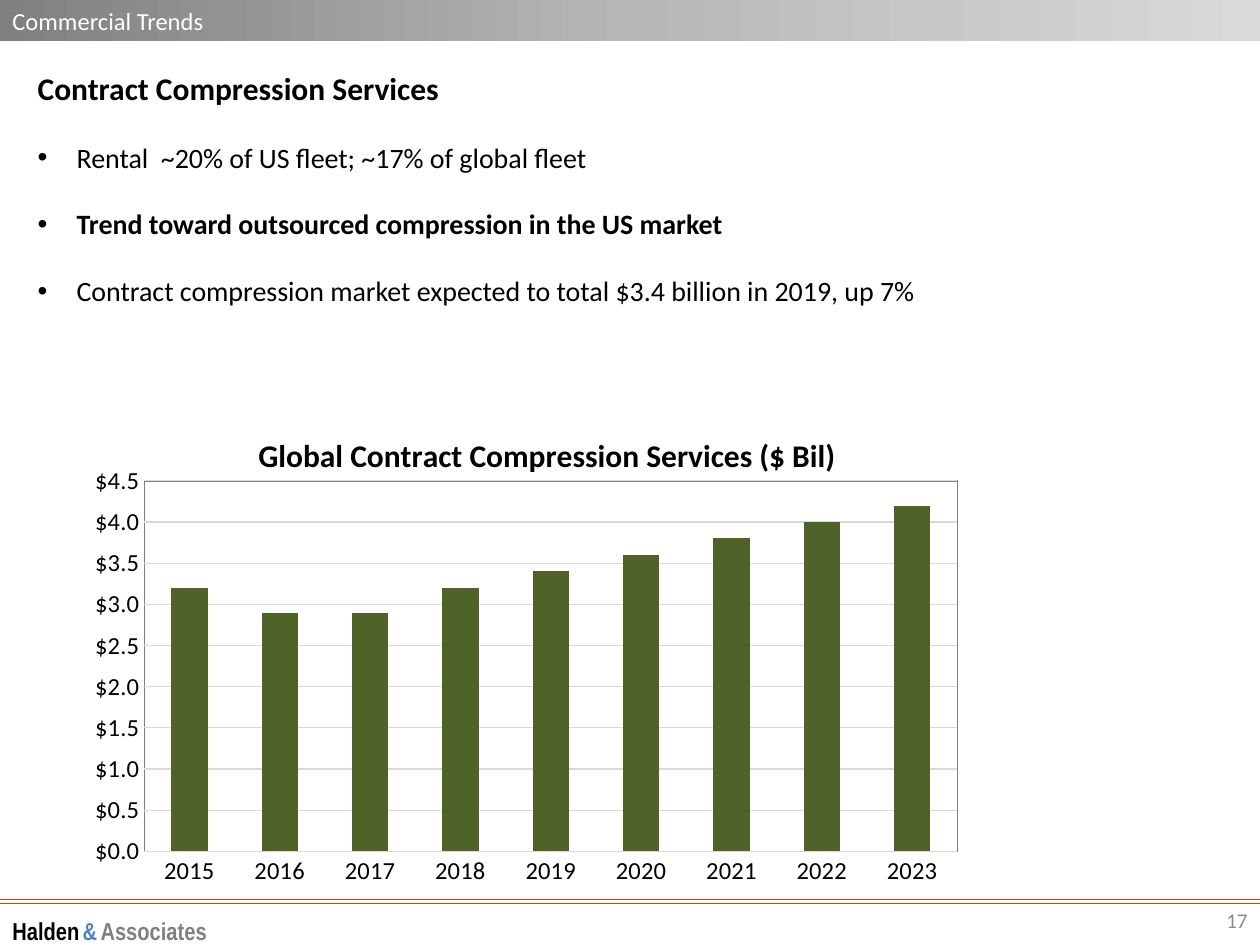
from copy import deepcopy

from lxml import etree
from pptx import Presentation
from pptx.chart import data
from pptx.dml import color
from pptx.enum import chart as ch, shapes, text
from pptx.oxml import ns, parse_xml
from pptx.util import Inches, Pt

RGB = color.RGBColor
BLACK = RGB(0x00, 0x00, 0x00)
WHITE = RGB(0xFF, 0xFF, 0xFF)
GRAY = RGB(0x80, 0x80, 0x80)
MID = RGB(0xB7, 0xB7, 0xB7)
PALE = RGB(0xD9, 0xD9, 0xD9)
DIM = RGB(0x8C, 0x8C, 0x8C)
RED = RGB(0xFF, 0x33, 0x00)
BLUE = RGB(0x4F, 0x81, 0xBD)
GREEN = RGB(0x4F, 0x62, 0x28)


def style(font, size, tint=BLACK, bold=False, face="Calibri"):
    """Set the look of a font."""
    font.name, font.size, font.bold = face, Pt(size), bold
    font.color.rgb = tint


def add_box(slide, left, top, width, height, anchor=text.MSO_ANCHOR.MIDDLE):
    """Add a wrapping text box and return its frame."""
    box = slide.shapes.add_textbox(*map(Inches, (left, top, width, height)))
    frame = box.text_frame
    frame.word_wrap = True
    frame.vertical_anchor = anchor
    return frame


def add_band(slide, label):
    """Add the shaded heading band across the top."""
    band = slide.shapes.add_shape(
        shapes.MSO_SHAPE.RECTANGLE, 0, 0, Inches(10), Inches(0.33))
    band.shadow.inherit = False
    band.line.fill.background()
    band.fill.gradient()
    band.fill.gradient_angle = 0
    stops = band._element.spPr.find(".//" + ns.qn("a:gsLst"))
    stops.insert(1, deepcopy(stops[0]))
    for stop, tint, place in zip(
            band.fill.gradient_stops, (GRAY, MID, PALE), (0, 0.5, 1)):
        stop.color.rgb, stop.position = tint, place
    frame = band.text_frame
    frame.vertical_anchor = text.MSO_ANCHOR.MIDDLE
    para = frame.paragraphs[0]
    para.text = label
    para.alignment = text.PP_ALIGN.LEFT
    style(para.font, 14, WHITE)


def add_rule(slide, top):
    """Add a thin red rule across the slide."""
    rule = slide.shapes.add_connector(
        shapes.MSO_CONNECTOR.STRAIGHT, 0, Inches(top), Inches(10), Inches(top))
    rule.line.color.rgb, rule.line.width = RED, Pt(0.75)
    etree.SubElement(rule._element.spPr, ns.qn("a:effectLst"))


def add_body(slide, head, points):
    """Add the heading and its bullets, given as (words, bold) pairs."""
    frame = add_box(slide, 0.2, 0.5, 9.55, 2.17, text.MSO_ANCHOR.TOP)
    para = frame.paragraphs[0]
    para.text = head
    style(para.font, 18, bold=True)
    for words, bold in points:
        para = frame.add_paragraph()
        para.text = words
        para.space_before = Pt(19)
        props = para._p.get_or_add_pPr()
        props.set("marL", str(Inches(0.31)))
        props.set("indent", str(-Inches(0.31)))
        etree.SubElement(props, ns.qn("a:buFont"), typeface="Arial")
        etree.SubElement(props, ns.qn("a:buChar"), char="•")
        style(para.font, 16, bold=bold)


def layout(target="", **spots):
    """Build a manual chart layout."""
    kind = f'<c:layoutTarget val="{target}"/>' if target else ""
    modes = "".join(f'<c:{k}Mode val="edge"/>' for k in "xy")
    sizes = "".join(f'<c:{k} val="{v}"/>' for k, v in spots.items())
    return parse_xml(f'<c:layout {ns.nsdecls("c")}><c:manualLayout>'
                     f'{kind}{modes}{sizes}</c:manualLayout></c:layout>')


def set_axis(axis):
    """Set what both axes share."""
    axis.major_tick_mark = axis.minor_tick_mark = ch.XL_TICK_MARK.NONE
    style(axis.tick_labels.font, 14)


def add_columns(slide, title, years, totals):
    """Add the column chart."""
    source = data.CategoryChartData()
    source.categories = years
    source.add_series("Series 1", totals)
    chart = slide.shapes.add_chart(
        ch.XL_CHART_TYPE.COLUMN_STACKED,
        *map(Inches, (0.5, 3.32, 7.17, 3.82)), source).chart
    style(chart.font, 10, bold=True)
    chart.has_legend = False
    head = chart.chart_title
    head.include_in_layout = False
    para = head.text_frame.paragraphs[0]
    para.text = title
    style(para.font, 18, bold=True)
    for old in head._element.findall(ns.qn("c:layout")):
        head._element.remove(old)
    head._element.find(ns.qn("c:tx")).addnext(layout(x=0.21, y=0.02))

    plot = chart.plots[0]
    plot.gap_width, plot.overlap = 150, 100
    plot.vary_by_categories = False
    fill = plot.series[0].format.fill
    fill.solid()
    fill.fore_color.rgb = GREEN

    cat, val = chart.category_axis, chart.value_axis
    set_axis(cat)
    set_axis(val)
    cat.format.line.color.rgb, cat.format.line.width = PALE, Pt(0.75)
    val.format.line.fill.background()
    val.minimum_scale, val.maximum_scale, val.major_unit = 0, 4.5, 0.5
    val.tick_labels.number_format = '"$"#,##0.0'
    val.tick_labels.number_format_is_linked = False
    grid = val.major_gridlines.format.line
    grid.color.rgb, grid.width = PALE, Pt(0.75)

    area = chart._chartSpace.chart.plotArea
    for old in area.findall(ns.qn("c:layout")):
        area.remove(old)
    area.insert(0, layout("inner", x=0.09, y=0.13, w=0.9, h=0.77))
    area.append(parse_xml(
        f'<c:spPr {ns.nsdecls("c", "a")}><a:noFill/><a:ln w="{Pt(0.75)}">'
        f'<a:solidFill><a:srgbClr val="{GRAY}"/></a:solidFill></a:ln></c:spPr>'))


def add_footer(slide, page):
    """Add the firm name and the page number."""
    para = add_box(slide, 0, 7.25, 4.33, 0.27).paragraphs[0]
    for words, size, tint in (("Halden", 14, BLACK), (" ", 8, BLACK),
                              ("&", 14, BLUE), (" ", 8, BLACK),
                              ("Associates", 14, GRAY)):
        run = para.add_run()
        run.text = words
        style(run.font, size, tint, words != " ", "Arial Narrow")
    para = add_box(slide, 7.67, 7.1, 2.33, 0.4).paragraphs[0]
    para.text = page
    para.alignment = text.PP_ALIGN.RIGHT
    style(para.font, 12, DIM)


def main():
    """Build the slide and save it."""
    deck = Presentation()
    deck.slide_width, deck.slide_height = Inches(10), Inches(7.5)
    slide = deck.slides.add_slide(deck.slide_layouts[6])
    add_band(slide, "Commercial Trends")
    for top in (7.14, 7.17):
        add_rule(slide, top)
    add_footer(slide, "17")
    add_body(slide, "Contract Compression Services", (
        ("Rental  ~20% of US fleet; ~17% of global fleet", False),
        ("Trend toward outsourced compression in the US market", True),
        ("Contract compression market expected to total $3.4 billion in 2019, "
         "up 7%", False)))
    add_columns(slide, "Global Contract Compression Services ($ Bil)",
                [str(year) for year in range(2015, 2024)],
                (3.2, 2.9, 2.9, 3.2, 3.4, 3.6, 3.8, 4, 4.2))
    deck.save("out.pptx")


if __name__ == "__main__":
    main()
